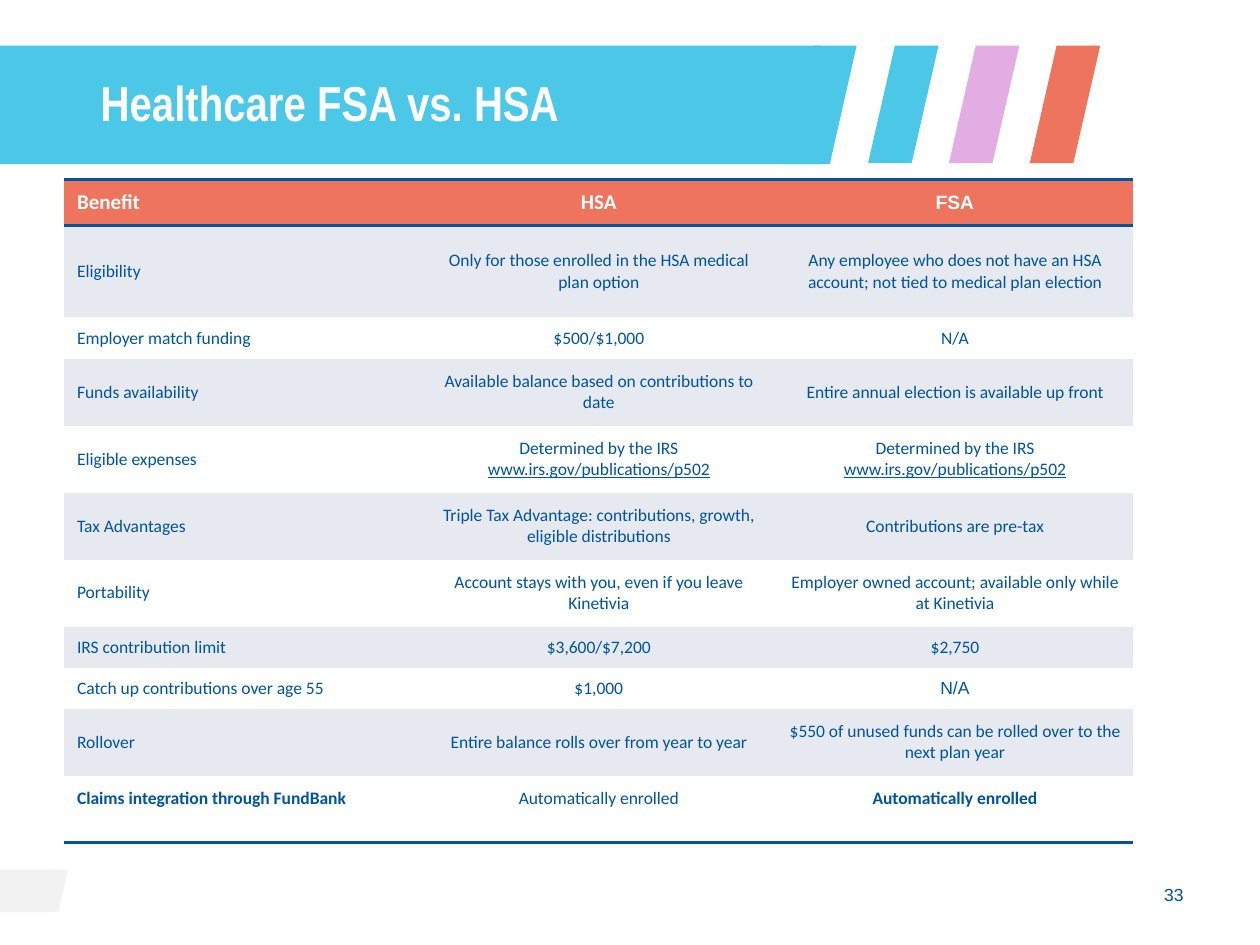
from lxml.etree import SubElement
from pptx import Presentation
from pptx.dml.color import RGBColor
from pptx.enum.shapes import MSO_SHAPE
from pptx.enum.text import MSO_ANCHOR, PP_ALIGN
from pptx.oxml import parse_xml
from pptx.oxml.ns import nsdecls, qn
from pptx.util import Cm, Pt

NAVY, CYAN, PINK, CORAL = "00549F", "4BC7E7", "E2ADE3", "EE745D"
WHITE, BAND, PALE = "FFFFFF", "E7E9F0", "F2F2F2"
NO_STYLE = "{2D5ABB26-0587-4C30-8999-92F81FD0307C}"
SLANT = 0.381

IRS = "Determined by the IRS\nwww.irs.gov/publications/p502"
ROWS = [
    (0.94, "Benefit", "HSA", "FSA"),
    (1.85, "Eligibility", "Only for those enrolled in the HSA medical plan option",
     "Any employee who does not have an HSA account; not tied to medical plan election"),
    (0.83, "Employer match funding", "$500/$1,000", "N/A"),
    (1.35, "Funds availability", "Available balance based on contributions to date",
     "Entire annual election is available up front"),
    (1.35, "Eligible expenses", IRS, IRS),
    (1.35, "Tax Advantages",
     "Triple Tax Advantage: contributions, growth, eligible distributions",
     "Contributions are pre-tax"),
    (1.35, "Portability", "Account stays with you, even if you leave Kinetivia",
     "Employer owned account; available only while at Kinetivia"),
    (0.83, "IRS contribution limit", "$3,600/$7,200", "$2,750"),
    (0.83, "Catch up contributions over age 55", "$1,000", "N/A"),
    (1.35, "Rollover", "Entire balance rolls over from year to year",
     "$550 of unused funds can be rolled over to the next plan year"),
    (1.35, "Claims integration through FundBank", "Automatically enrolled",
     "Automatically enrolled"),
]
LAST = len(ROWS) - 1
SPECIAL = {
    (0, 2): {"size": 11, "font": "Arial"},
    (8, 2): {"font": "Arial"},
    (LAST, 0): {"bold": True},
    (LAST, 2): {"bold": True},
}


def color(value):
    return RGBColor.from_string(value)


def write(frame, text, size=10, font="Calibri", fill=NAVY, bold=False,
          align=PP_ALIGN.LEFT, spacing=None):
    frame.word_wrap = True
    for index, line in enumerate(text.split("\n")):
        para = frame.paragraphs[0] if index == 0 else frame.add_paragraph()
        para.alignment = align
        para.line_spacing = spacing
        span = para.add_run()
        span.text = line
        span.font.size = Pt(size)
        span.font.name = font
        span.font.bold = bold
        span.font.underline = line.startswith("www.")
        span.font.color.rgb = color(fill)


def add_shape(page, kind, left, top, width, height, fill):
    shape = page.shapes.add_shape(kind, Cm(left), Cm(top), Cm(width), Cm(height))
    shape.shadow.inherit = False
    shape.fill.solid()
    shape.fill.fore_color.rgb = color(fill)
    shape.line.fill.background()
    if kind == MSO_SHAPE.PARALLELOGRAM:
        shape.adjustments[0] = SLANT


def add_text(page, left, top, width, height, text, **style):
    box = page.shapes.add_textbox(Cm(left), Cm(top), Cm(width), Cm(height))
    box.text_frame.vertical_anchor = MSO_ANCHOR.MIDDLE
    write(box.text_frame, text, **style)


def add_border(cell, side):
    line = parse_xml(f'<a:{side} {nsdecls("a")} w="{Pt(2)}"/>')
    SubElement(SubElement(line, qn("a:solidFill")), qn("a:srgbClr")).set("val", NAVY)
    cell._tc.get_or_add_tcPr().insert(0, line)


def add_benefits(page):
    frame = page.shapes.add_table(len(ROWS), 3, Cm(1.3), Cm(3.61), Cm(21.54),
                                  Cm(sum(row[0] for row in ROWS)))
    table = frame.table
    table.horz_banding = table.first_row = False
    table._tbl.tblPr.find(qn("a:tableStyleId")).text = NO_STYLE
    for column in table.columns:
        column.width = Cm(7.18)
    for row, (height, *texts) in enumerate(ROWS):
        table.rows[row].height = Cm(height)
        for column, text in enumerate(texts):
            cell = table.cell(row, column)
            cell.vertical_anchor = MSO_ANCHOR.MIDDLE
            cell.fill.solid()
            cell.fill.fore_color.rgb = color(
                CORAL if row == 0 else BAND if row % 2 else WHITE)
            style = {"align": PP_ALIGN.CENTER if column else PP_ALIGN.LEFT}
            if row == 0:
                style.update(size=12, fill=WHITE, bold=True)
            style.update(SPECIAL.get((row, column), {}))
            write(cell.text_frame, text, **style)
            if row in (0, LAST):
                add_border(cell, "lnB")
            if row == 0:
                add_border(cell, "lnT")
            if row == LAST:
                cell.margin_bottom = Cm(0.55)


def main():
    deck = Presentation()
    deck.slide_width, deck.slide_height = Cm(25.4), Cm(19.05)
    page = deck.slides.add_slide(deck.slide_layouts[6])
    add_shape(page, MSO_SHAPE.PARALLELOGRAM, 0.86, 17.53, 0.51, 0.86, PALE)
    add_shape(page, MSO_SHAPE.RECTANGLE, 0, 17.53, 1.12, 0.86, PALE)
    add_shape(page, MSO_SHAPE.RECTANGLE, 0, 0.92, 16.56, 2.39, CYAN)
    add_shape(page, MSO_SHAPE.PARALLELOGRAM, 15.85, 0.92, 1.42, 2.39, CYAN)
    for index, fill in enumerate((CYAN, PINK, CORAL)):
        add_shape(page, MSO_SHAPE.PARALLELOGRAM, 17.5 + index * 1.63, 0.92,
                  1.42, 2.37, fill)
    add_text(page, 18.39, 17.53, 5.72, 1.02, "33", font="Arial", align=PP_ALIGN.RIGHT)
    add_text(page, 1.78, 1.55, 14.81, 1.14, "Healthcare FSA vs. HSA", size=28,
             font="Arial Narrow", fill=WHITE, bold=True, spacing=0.9)
    add_benefits(page)
    deck.save("out.pptx")


if __name__ == "__main__":
    main()
